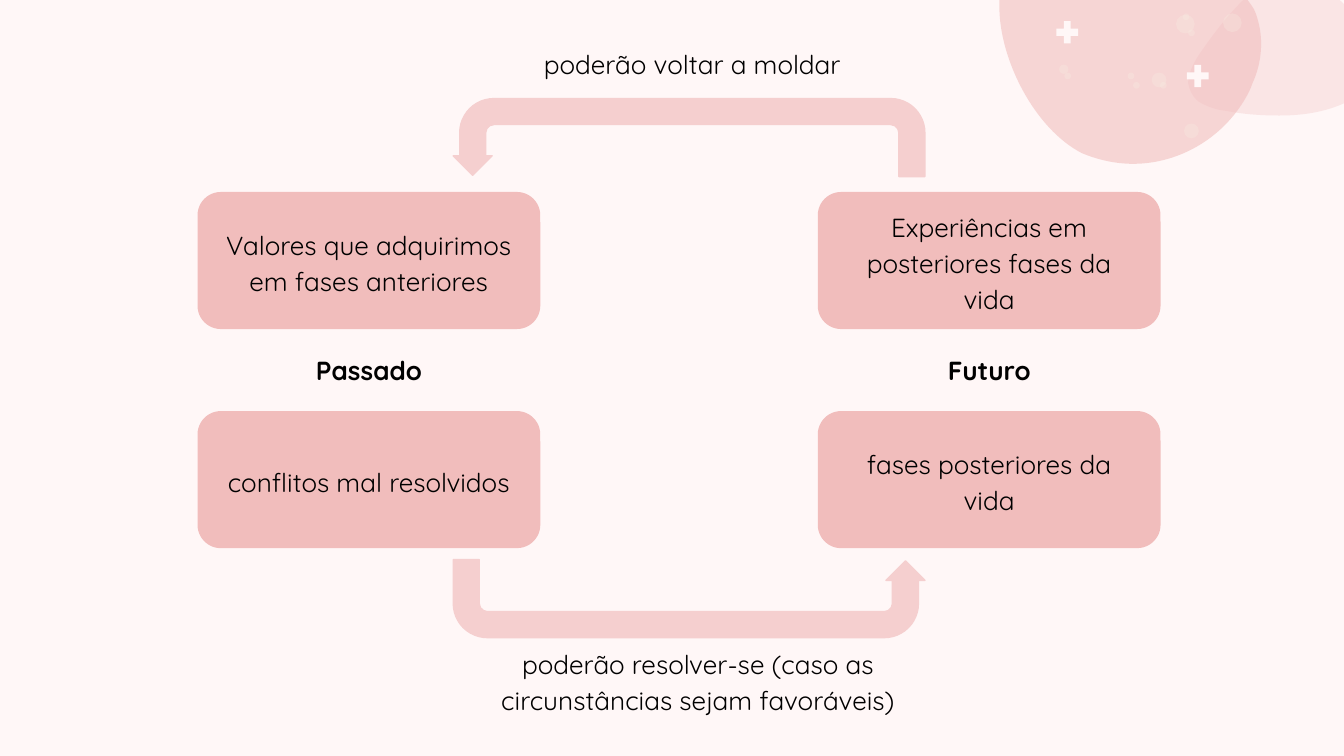
from itertools import product
from lxml.etree import SubElement
from pptx import Presentation
from pptx.dml.color import RGBColor
from pptx.enum.shapes import MSO_SHAPE
from pptx.enum.text import MSO_ANCHOR, MSO_AUTO_SIZE, PP_ALIGN
from pptx.oxml.ns import qn
from pptx.util import Pt

HUES = {"back": "FFF7F7", "rose": "F1BDBC", "pale": "F5CFCF",
        "cream": "F8F2E5", "ink": "000000"}

FRAME = {"word_wrap": True, "margin_left": Pt(7.2), "margin_top": Pt(7.2),
         "margin_right": Pt(7.2), "margin_bottom": Pt(7.2)}
FONT = {"name": "Quicksand", "size": Pt(14)}
LOOSE = {"line_spacing": 1.15, "space_before": Pt(10), "space_after": Pt(10)}
BELOW = {"line_spacing": 1.15, "space_after": Pt(10)}

SMALL = [(689, -12.2),
         (688.3, -12.2), (687.6, -12.2), (686.9, -12.2),
         (671, -10.8), (651.6, 15.8), (642.2, 29.5),
         (639.4, 33.8), (636.5, 39.6), (636.5, 44.6),
         (637.2, 48.2), (638.6, 51.1), (640.8, 53.3),
         (641.5, 54), (642.2, 54.7), (643.7, 55.4),
         (648, 57.6), (652.3, 59), (656.6, 59.4),
         (666, 61.2), (675.4, 61.9), (685.4, 61.9),
         (699.1, 61.9), (712.1, 59.8), (724.3, 53.3),
         (730.1, 50.4), (735.8, 46.1), (737.3, 39.6),
         (738.7, 33.8), (737.3, 28.8), (735.1, 24.5),
         (735.1, 22.3), (733.7, 20.9), (733, 19.4),
         (724.3, 2.9), (707, -12.2), (689, -12.2)]
LARGE = [(589, -27.4),
         (586.1, -27.4), (583.2, -27.4), (580.3, -27.4),
         (575.3, -26.6), (570.2, -26.6), (565.2, -25.9),
         (553.7, -23.8), (545.8, -21.6), (540.7, -15.8),
         (538.6, -13.7), (537.1, -9.4), (535.7, -5),
         (535.4, -2.2), (535.4, 0.7), (535.4, 4.3),
         (535.7, 32.4), (554.4, 69.1), (579.6, 82.1),
         (588.2, 85.7), (597.6, 87.8), (607, 87.8),
         (632.2, 87.8), (656.6, 73.4), (668.9, 49.7),
         (669.6, 48.2), (670.3, 46.8), (671, 44.6),
         (675.4, 35.3), (676.8, 23.8), (674.6, 13.7),
         (673.9, 10.8), (673.2, 7.9), (671.8, 5),
         (663.8, -8.6), (648.7, -16.6), (634.3, -20.9),
         (619.2, -25.2), (603.4, -27.4), (589, -27.4)]
PLUS = [(4, 0), (7.7, 0), (7.7, 4.1), (11.7, 4.1), (11.7, 7.9), (7.7, 7.9),
        (7.7, 12), (4, 12), (4, 7.9), (0, 7.9), (0, 4.1), (4, 4.1)]
DOTS = [(655.2, 7.2, 10), (607, 43.9, 3.6), (567.4, 34.6, 5),
        (570.2, 38.9, 3.6), (617, 38.9, 7.9), (621.4, 43.9, 3.6),
        (630, 7.9, 10), (636.5, 15.8, 3.6), (633.6, 7.2, 3.6),
        (604.1, 38.9, 3.6), (634.3, 66.2, 7.9)]


def style(item, values):
    for key, value in values.items():
        setattr(item, key, value)


def paint(shape, hue, alpha=None, edge=False):
    tone = RGBColor.from_string(HUES[hue])
    shape.shadow.inherit = False
    shape.fill.solid()
    shape.fill.fore_color.rgb = tone
    if alpha:
        node = shape.element.spPr.find(".//" + qn("a:srgbClr"))
        SubElement(node, qn("a:alpha")).set("val", str(alpha * 1000))
    if edge:
        shape.line.color.rgb = tone
        shape.line.width = Pt(0.75)
    else:
        shape.line.fill.background()


def add_form(slide, kind, left, top, wide, high, hue, **look):
    shape = slide.shapes.add_shape(kind, Pt(left), Pt(top), Pt(wide), Pt(high))
    paint(shape, hue, **look)
    return shape


def add_path(slide, knots, hue, alpha=None):
    first, *rest = [(Pt(x), Pt(y)) for x, y in knots]
    pen = slide.shapes.build_freeform(*first)
    pen.add_line_segments(rest, close=True)
    shape = pen.convert_to_shape()
    paint(shape, hue, alpha)
    return shape


def add_blob(slide, knots, hue, alpha):
    shape = add_path(slide, knots, hue, alpha)
    lines = list(shape.element.iter(qn("a:lnTo")))
    for i in range(0, len(knots) - 1, 3):
        lines[i].tag = qn("a:cubicBezTo")
        for line in lines[i + 1:i + 3]:
            lines[i].append(line[0])
            line.getparent().remove(line)


def write(shape, text, gaps, bold=False):
    frame = shape.text_frame
    style(frame, FRAME)
    para = frame.paragraphs[0]
    style(para, {"alignment": PP_ALIGN.CENTER, **gaps})
    run = para.add_run()
    run.text = text
    style(run.font, {**FONT, "bold": bold})
    run.font.color.rgb = RGBColor.from_string(HUES["ink"])


def add_card(slide, left, top, text):
    card = add_form(slide, MSO_SHAPE.ROUNDED_RECTANGLE, left, top, 182.9, 72.7,
                    "rose", edge=True)
    card.adjustments[0] = 0.167
    card.text_frame.vertical_anchor = MSO_ANCHOR.MIDDLE
    write(card, text, LOOSE)


def add_label(slide, left, top, wide, high, text, gaps, bold=False):
    label = slide.shapes.add_textbox(Pt(left), Pt(top), Pt(wide), Pt(high))
    write(label, text, gaps, bold)
    label.text_frame.auto_size = MSO_AUTO_SIZE.SHAPE_TO_FIT_TEXT


def add_turn(slide, top, angle):
    turn = add_form(slide, MSO_SHAPE.U_TURN_ARROW, 242.8, top, 252.7, 41.8,
                    "pale", edge=True)
    for i, value in enumerate((0.333, 0.25, 0.25, 0.438, 0.984)):
        turn.adjustments[i] = value
    turn.rotation = angle
    turn.element.spPr.find(qn("a:xfrm")).set("flipH", "1")


def main():
    deck = Presentation()
    style(deck, {"slide_width": Pt(720), "slide_height": Pt(405)})
    slide = deck.slides.add_slide(deck.slide_layouts[6])
    back = slide.background.fill
    back.solid()
    back.fore_color.rgb = RGBColor.from_string(HUES["back"])

    add_blob(slide, SMALL, "pale", 44)
    add_blob(slide, LARGE, "rose", 58)
    for left, top, size in DOTS:
        add_form(slide, MSO_SHAPE.OVAL, left, top, size, size, "cream", alpha=26)
    for left, top in ((635.8, 34.7), (565.9, 11.3)):
        add_path(slide, [(left + x, top + y) for x, y in PLUS], "back")

    cards = ("Valores que adquirimos em fases anteriores",
             "Experiências em posteriores fases da vida",
             "conflitos mal resolvidos",
             "fases posteriores da vida")
    for (top, left), text in zip(product((103.2, 220.6), (106.2, 438.5)), cards):
        add_card(slide, left, top, text)
    for left, text in ((135.8, "Passado"), (468.1, "Futuro")):
        add_label(slide, left, 182.9, 123.8, 31.7, text, {}, bold=True)
    for top, angle in ((52.8, 0), (299.8, 180)):
        add_turn(slide, top, angle)
    add_label(slide, 250.9, 16.1, 236.2, 31.7, " poderão voltar a moldar", BELOW)
    add_label(slide, 255.9, 337.7, 236.2, 51.1,
              "poderão resolver-se (caso as circunstâncias sejam favoráveis)", LOOSE)
    deck.save("out.pptx")


if __name__ == "__main__":
    main()
